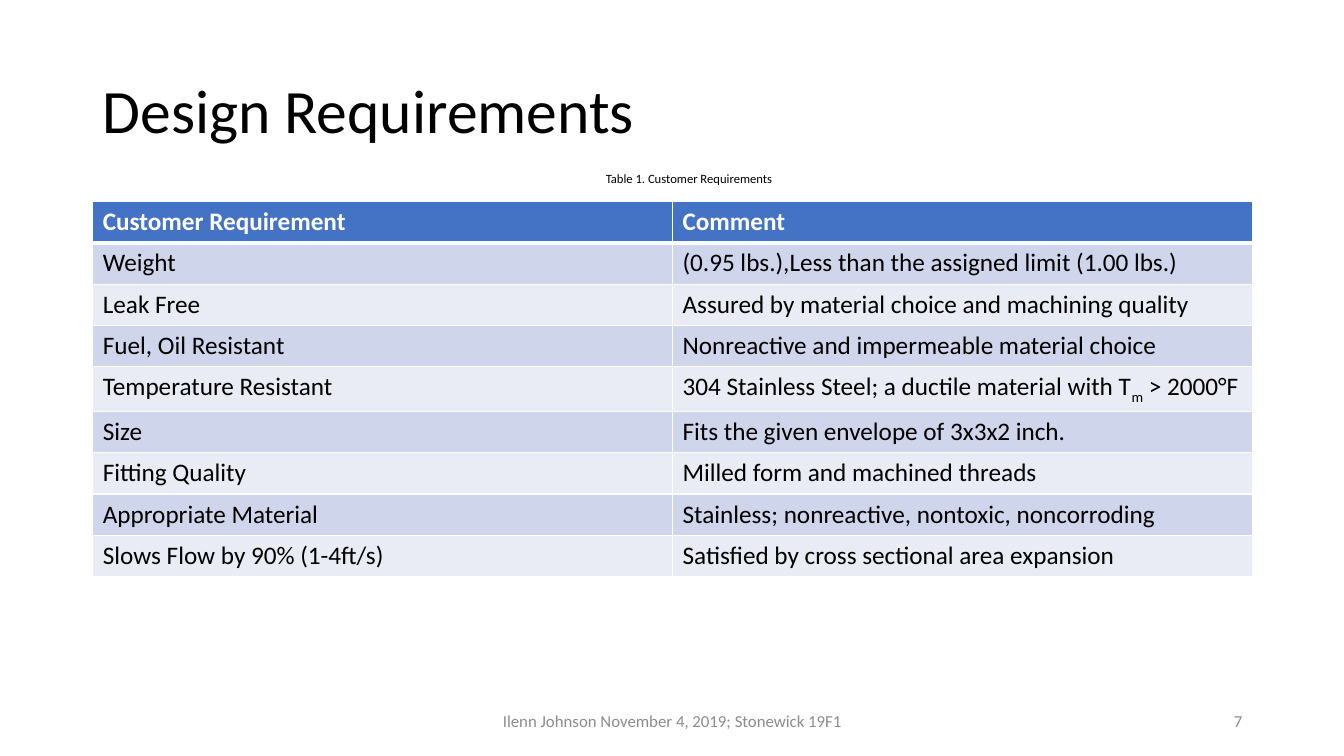
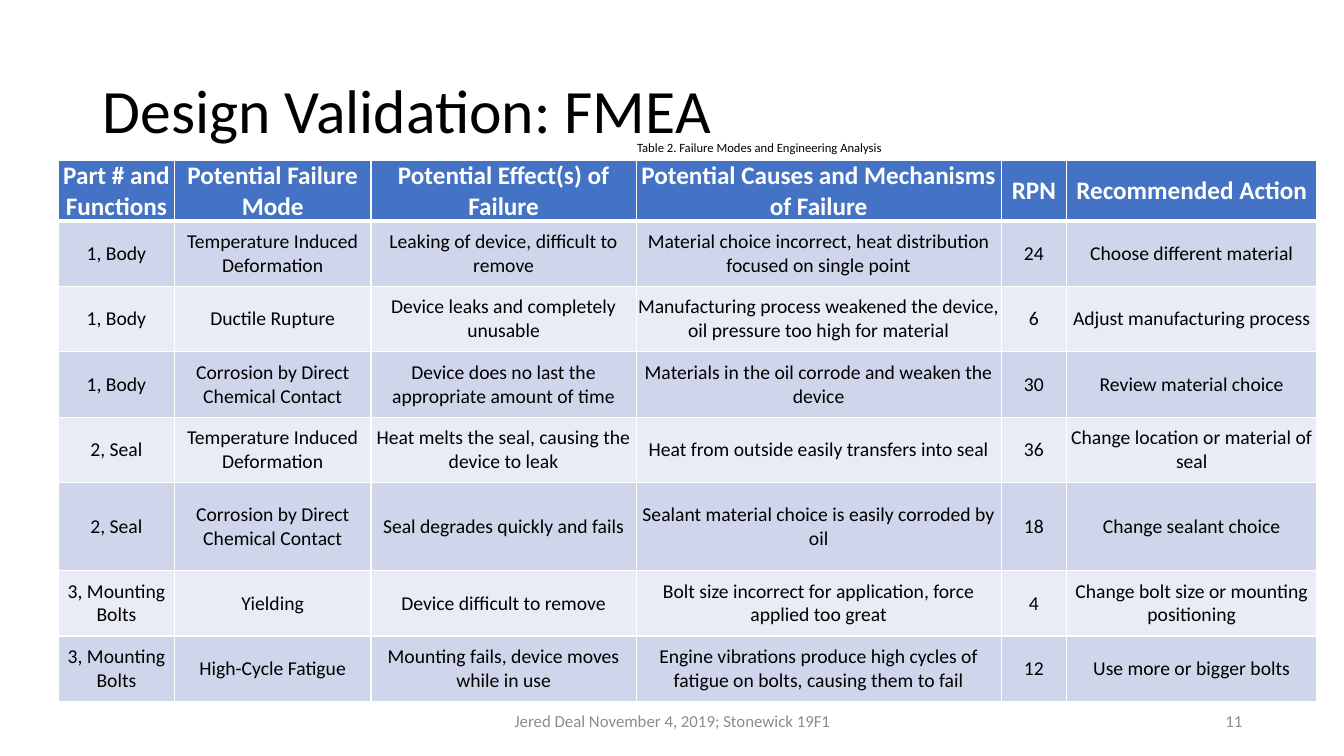
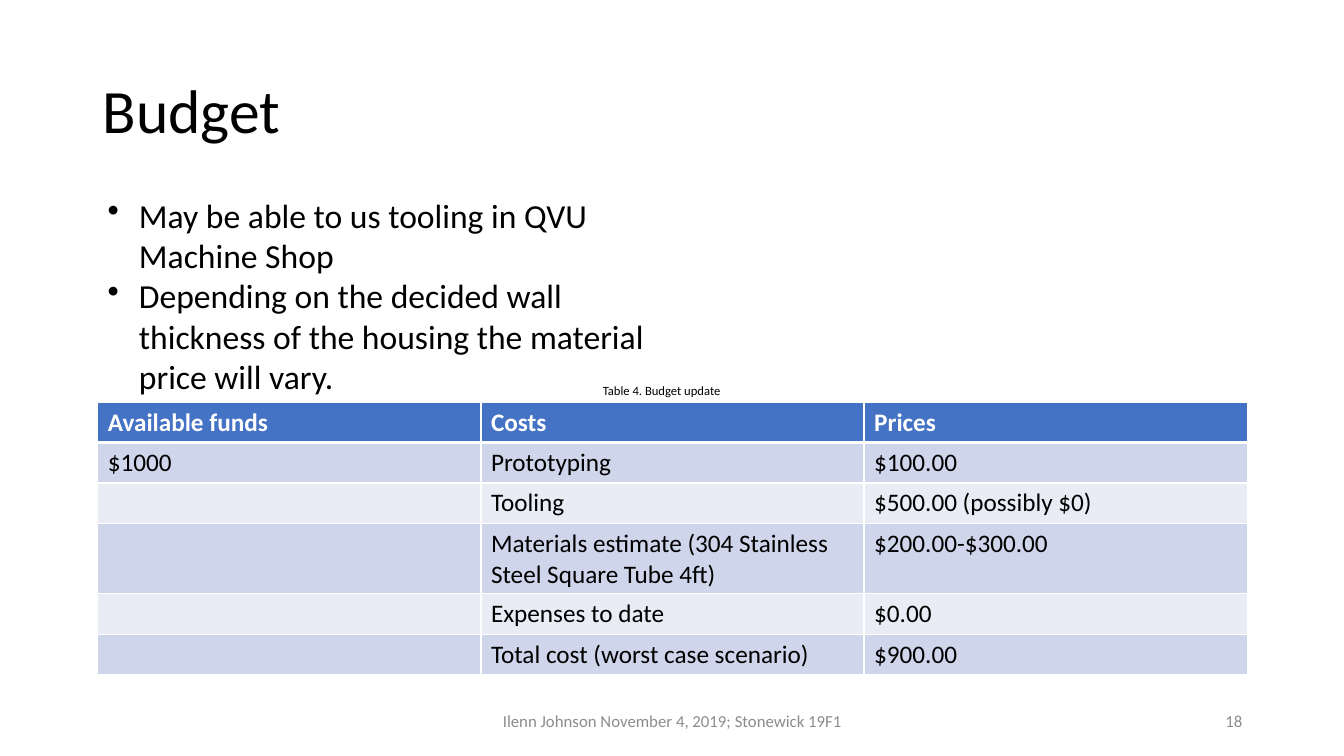
"""Build three design review slides: requirements, FMEA and budget."""
import pptx
import pptx.util
import pptx.dml.color
import pptx.enum.text
import pptx.oxml
import pptx.oxml.ns

RGB = pptx.dml.color.RGBColor
BLACK = RGB(0x00, 0x00, 0x00)
WHITE = RGB(0xFF, 0xFF, 0xFF)
GRAY = RGB(0x8C, 0x8C, 0x8C)
HEAD = RGB(0x44, 0x72, 0xC4)
BANDS = (RGB(0xCF, 0xD5, 0xEA), RGB(0xE9, 0xEB, 0xF5))
FONT = "Calibri"
WIDE, HIGH = 13.33, 7.5
EDGE = 0.92
TITLE = (EDGE, 0.4, 11.5, 1.45)
FOOT = (4.42, 6.95, 4.5, 0.4)
PAGE = (9.42, 6.95, 3, 0.4)
INDENT = 0.31

ALIGN = pptx.enum.text.PP_ALIGN
MIDDLE = pptx.enum.text.MSO_ANCHOR.MIDDLE
TOP = pptx.enum.text.MSO_ANCHOR.TOP
GROW = pptx.enum.text.MSO_AUTO_SIZE.SHAPE_TO_FIT_TEXT

SLIDES = [
    {
        "title": "Design Requirements",
        "foot": "Ilenn Johnson November 4, 2019; Stonewick 19F1",
        "page": "7",
        "label": "Table 1. Customer Requirements",
        "spot": (5.91, 1.65),
        "at": (EDGE, 2),
        "cols": [5.75] * 2,
        "rows": [0.41] * 9,
        "cells": [
            ("Customer Requirement", "Comment"),
            ("Weight", "(0.95 lbs.),Less than the assigned limit (1.00 lbs.)"),
            ("Leak Free", "Assured by material choice and machining quality"),
            ("Fuel, Oil Resistant", "Nonreactive and impermeable material choice"),
            ("Temperature Resistant",
             ("304 Stainless Steel; a ductile material with T", "m", " > 2000°F")),
            ("Size", "Fits the given envelope of 3x3x2 inch."),
            ("Fitting Quality", "Milled form and machined threads"),
            ("Appropriate Material", "Stainless; nonreactive, nontoxic, noncorroding"),
            ("Slows Flow by 90% (1-4ft/s)", "Satisfied by cross sectional area expansion"),
        ],
    },
    {
        "title": "Design Validation: FMEA",
        "foot": "Jered Deal November 4, 2019; Stonewick 19F1",
        "page": "11",
        "label": "Table 2. Failure Modes and Engineering Analysis",
        "spot": (6.22, 1.34),
        "at": (0.58, 1.59),
        "cols": [1.15, 1.95, 2.63, 3.62, 0.65, 2.48],
        "rows": [0.51] + [0.65] * 4 + [0.87] + [0.65] * 2,
        "dense": True,
        "cells": [
            ("Part # and Functions", "Potential Failure Mode", "Potential Effect(s) of Failure",
             "Potential Causes and Mechanisms of Failure", "RPN", "Recommended Action"),
            ("1, Body", "Temperature Induced Deformation",
             "Leaking of device, difficult to remove",
             "Material choice incorrect, heat distribution focused on single point",
             "24", "Choose different material"),
            ("1, Body", "Ductile Rupture", "Device leaks and completely unusable",
             "Manufacturing process weakened the device, oil pressure too high for material",
             "6", "Adjust manufacturing process"),
            ("1, Body", "Corrosion by Direct Chemical Contact",
             "Device does no last the appropriate amount of time",
             "Materials in the oil corrode and weaken the device",
             "30", "Review material choice"),
            ("2, Seal", "Temperature Induced Deformation",
             "Heat melts the seal, causing the device to leak",
             "Heat from outside easily transfers into seal",
             "36", "Change location or material of seal"),
            ("2, Seal", "Corrosion by Direct Chemical Contact", "Seal degrades quickly and fails",
             "Sealant material choice is easily corroded by oil",
             "18", "Change sealant choice"),
            ("3, Mounting Bolts", "Yielding", "Device difficult to remove",
             "Bolt size incorrect for application, force applied too great",
             "4", "Change bolt size or mounting positioning"),
            ("3, Mounting Bolts", "High-Cycle Fatigue",
             "Mounting fails, device moves while in use",
             "Engine vibrations produce high cycles of fatigue on bolts, causing them to fail",
             "12", "Use more or bigger bolts"),
        ],
    },
    {
        "title": "Budget",
        "foot": "Ilenn Johnson November 4, 2019; Stonewick 19F1",
        "page": "18",
        "label": "Table 4. Budget update",
        "spot": (5.88, 3.75),
        "at": (0.97, 3.99),
        "cols": [3.8] * 3,
        "rows": [0.4] * 3 + [0.53] + [0.4] * 2,
        "notes": [
            "May be able to us tooling in QVU Machine Shop",
            "Depending on the decided wall thickness of the housing the material price will vary.",
        ],
        "cells": [
            ("Available funds", "Costs", "Prices"),
            ("$1000", "Prototyping", "$100.00"),
            ("", "Tooling", "$500.00 (possibly $0)"),
            ("", "Materials estimate (304 Stainless Steel Square Tube 4ft)", "$200.00-$300.00"),
            ("", "Expenses to date", "$0.00"),
            ("", "Total cost (worst case scenario)", "$900.00"),
        ],
    },
]


def inch(*sizes):
    return [pptx.util.Inches(size) for size in sizes]


def node(xml):
    return pptx.oxml.parse_xml(xml.replace(" ", f" {pptx.oxml.ns.nsdecls('a')} ", 1))


def write(frame, lines, size=18, color=BLACK, bold=False, align=ALIGN.LEFT,
          space=None, bullet=False):
    for i, line in enumerate(lines):
        para = frame.add_paragraph() if i else frame.paragraphs[0]
        para.alignment = align
        para.line_spacing = space
        para.font.size = pptx.util.Pt(size)
        if bullet:
            props = para._p.get_or_add_pPr()
            step = inch(INDENT)[0]
            props.set("marL", str(step))
            props.set("indent", str(-step))
            mark = node('<a:buChar char="•"/>')
            props.insert_element_before(mark, "a:tabLst", "a:defRPr", "a:extLst")
        parts = (line,) if isinstance(line, str) else line
        for j, part in enumerate(parts):
            if not part:
                continue
            run = para.add_run()
            run.text = part
            run.font.name = FONT
            run.font.size = pptx.util.Pt(size)
            run.font.bold = bold
            run.font.color.rgb = color
            if j % 2:
                run._r.get_or_add_rPr().set("baseline", "-25000")


def box(slide, at, lines, anchor=MIDDLE, grow=False, **form):
    frame = slide.shapes.add_textbox(*inch(*at)).text_frame
    frame.word_wrap = True
    frame.vertical_anchor = anchor
    if grow:
        frame.auto_size = GROW
    write(frame, lines, **form)


def rule(cell, row):
    props = cell._tc.get_or_add_tcPr()
    for side in "LRTB":
        thick = (row, side) in ((0, "B"), (1, "T"))
        width = pptx.util.Pt(3 if thick else 1)
        props.append(node(f'<a:ln{side} w="{width}"><a:solidFill>'
                          f'<a:srgbClr val="{WHITE}"/></a:solidFill></a:ln{side}>'))


def grid(slide, data):
    cols, rows, dense = data["cols"], data["rows"], data.get("dense", False)
    at = inch(*data["at"], sum(cols), sum(rows))
    table = slide.shapes.add_table(len(rows), len(cols), *at).table
    for col, width in zip(table.columns, inch(*cols)):
        col.width = width
    for i, (row, tall) in enumerate(zip(table.rows, inch(*rows))):
        row.height = tall
        for cell, words in zip(row.cells, data["cells"][i]):
            rule(cell, i)
            cell.fill.solid()
            cell.fill.fore_color.rgb = BANDS[(i - 1) % 2] if i else HEAD
            if dense:
                cell.margin_left = cell.margin_right = 0
                cell.margin_top = cell.margin_bottom = 0
                cell.vertical_anchor = MIDDLE
            write(cell.text_frame, [words], size=14 if dense and i else 18,
                  color=BLACK if i else WHITE, bold=not i,
                  align=ALIGN.CENTER if dense else ALIGN.LEFT)


def main():
    deck = pptx.Presentation()
    deck.slide_width, deck.slide_height = inch(WIDE, HIGH)
    for data in SLIDES:
        slide = deck.slides.add_slide(deck.slide_layouts[6])
        box(slide, TITLE, [data["title"]], size=44, space=0.9)
        grid(slide, data)
        box(slide, FOOT, [data["foot"]], size=12, color=GRAY, align=ALIGN.CENTER)
        box(slide, PAGE, [data["page"]], size=12, color=GRAY, align=ALIGN.RIGHT)
        if "notes" in data:
            box(slide, (0.97, 1.88, 5.7, 2.12), data["notes"], anchor=TOP, grow=True,
                size=24, bullet=True)
        box(slide, (*data["spot"], 3.31, 0.25), [data["label"]], anchor=TOP, grow=True, size=9)
    deck.save("out.pptx")


if __name__ == "__main__":
    main()
